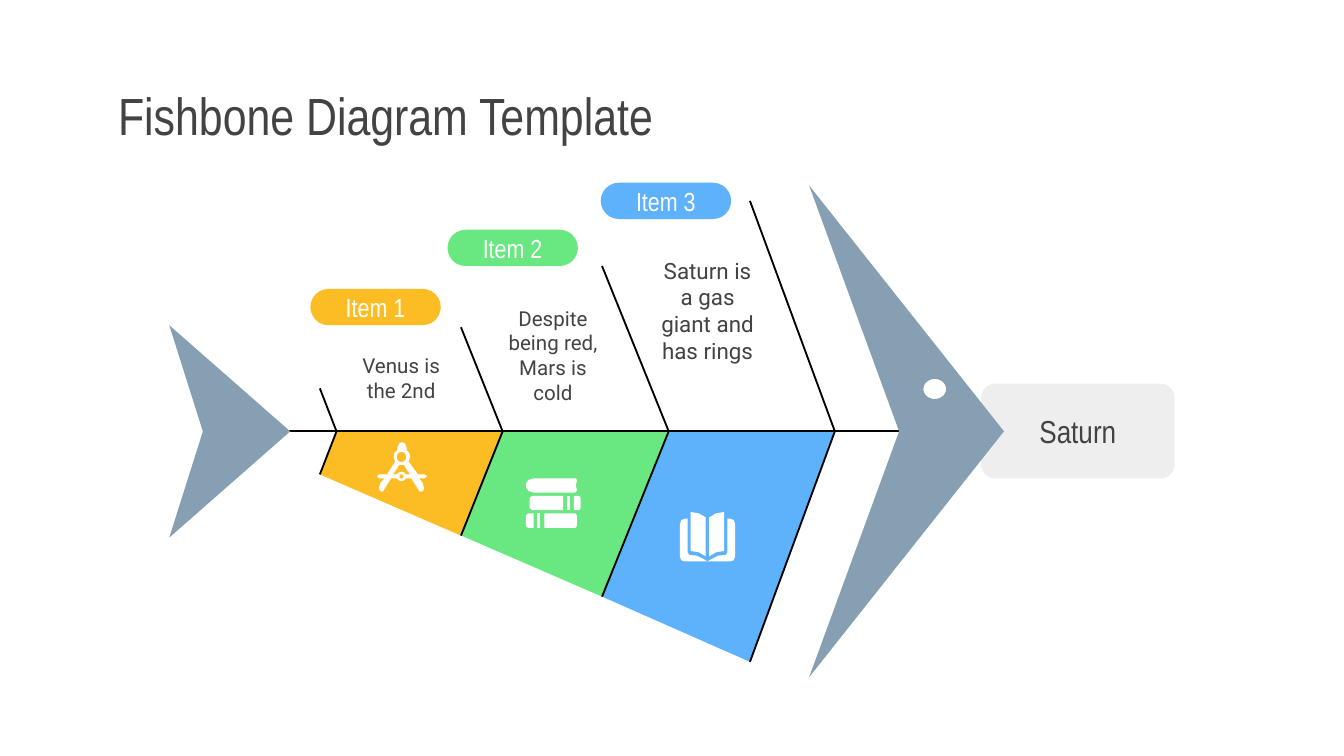
from dataclasses import dataclass
from math import cos, pi, sin

from lxml.etree import SubElement
from pptx import Presentation
from pptx.dml.color import RGBColor as Color
from pptx.enum.shapes import MSO_CONNECTOR as Connector, MSO_SHAPE as Shape
from pptx.enum.text import MSO_ANCHOR as Anchor, PP_ALIGN as Align
from pptx.oxml.ns import qn
from pptx.util import Inches, Pt


@dataclass(frozen=True)
class Theme:
    heading: str = "Arial Narrow"
    body: str = "Roboto"
    text: str = "434343"
    white: str = "FFFFFF"
    black: str = "000000"
    fish: str = "869FB2"
    label: str = "EEEEEE"
    amber: str = "FCBD24"
    green: str = "69E781"
    blue: str = "5EB2FC"
    title_size: int = 28
    label_size: int = 17
    item_size: int = 14
    line_width: float = 0.98


theme = Theme()
deck = Presentation()
deck.slide_width = Inches(10)
deck.slide_height = Inches(10) * 9 // 16
page = deck.slides.add_slide(deck.slide_layouts[6])
shapes = page.shapes
CELL = deck.slide_width // 100  # square grid, 100 columns across the slide


def draw_outline(contours, fill=None):
    """Draw grid points as one shape: filled and closed, or an open black line."""
    grid = [[(x * CELL, y * CELL) for x, y in contour] for contour in contours]
    builder = shapes.build_freeform(*grid[0][0])
    for number, points in enumerate(grid):
        if number:
            builder.move_to(*points[0])
        builder.add_line_segments(points[1:], close=fill is not None)
    outline = builder.convert_to_shape()
    outline.shadow.inherit = False
    if fill:
        outline.fill.solid()
        outline.fill.fore_color.rgb = Color.from_string(fill)
        outline.line.fill.background()
    else:
        outline.fill.background()
        outline.line.color.rgb = Color.from_string(theme.black)
        outline.line.width = Pt(theme.line_width)


def add_text(text, area, font, size, color=theme.text, align=Align.CENTER,
             fill=None, rounding=0.5):
    """Add text in a grid area, on a rounded rectangle when a fill is given."""
    place = [round(length * CELL) for length in area]
    if fill:
        box = shapes.add_shape(Shape.ROUNDED_RECTANGLE, *place)
        box.adjustments[0] = rounding
        box.shadow.inherit = False
        box.fill.solid()
        box.fill.fore_color.rgb = Color.from_string(fill)
        box.line.fill.background()
    else:
        box = shapes.add_textbox(*place)
    frame = box.text_frame
    frame.word_wrap = True
    frame.vertical_anchor = Anchor.MIDDLE
    frame.margin_left = frame.margin_right = CELL
    frame.margin_top = frame.margin_bottom = CELL
    para = frame.paragraphs[0]
    para.text = text
    para.alignment = align
    para.font.name = font
    para.font.size = Pt(size)
    para.font.color.rgb = Color.from_string(color)


# Fish geometry, mirrored about the spine
SPINE = 32.1
bases = [25.04 + 12.36 * rib for rib in range(4)]
tips = [(23.8, 3.2), (34.3, 7.75), (44.8, 12.3), (55.8, 17.15)]  # column, reach

# Circles cut out of other outlines: centre, horizontal and vertical radius
turns = [2 * pi * step / 24 for step in range(24)]
eye, hinge, pivot = [
    [(x + across * cos(turn), y + down * sin(turn)) for turn in turns]
    for x, y, across, down in [
        (69.55, 28.95, 0.85, 0.75), (29.87, 34, 0.35, 0.38), (29.87, 35.45, 0.16, 0.16)]
]

# Icons: one list of shapes each, every shape a list of contours
compass = [[
    [(29.9, 32.9), (30.15, 33), (30.25, 33.3), (30.25, 33.5), (30.45, 33.7),
     (30.52, 34), (30.4, 34.35), (31.1, 35.3), (31.6, 35.3), (31.77, 35.45),
     (31.6, 35.6), (31.2, 35.6), (31.45, 35.95), (31.55, 36.35), (31.45, 36.55),
     (31.3, 36.6), (31.2, 36.55), (30.6, 35.6), (30.2, 35.6), (30.05, 35.75),
     (29.87, 35.8), (29.7, 35.75), (29.5, 35.6), (29.1, 35.6), (28.5, 36.55),
     (28.4, 36.6), (28.25, 36.5), (28.2, 36.3), (28.3, 35.95), (28.6, 35.6),
     (28.2, 35.6), (28.05, 35.45), (28.2, 35.3), (28.8, 35.3), (29.4, 34.35),
     (29.28, 34), (29.35, 33.7), (29.55, 33.5), (29.6, 33.2), (29.7, 33)],
    hinge,
    [(29.7, 34.6), (30.05, 34.6), (30.5, 35.3), (30.2, 35.3), (30.05, 35.15),
     (29.87, 35.1), (29.7, 35.15), (29.5, 35.3), (29.25, 35.3)],
    pivot,
]]
books = [
    [[(39.7, 35.6), (39.35, 35.7), (39.15, 35.95), (39.15, 36.3), (39.35, 36.55),
      (39.7, 36.65), (42.8, 36.65), (42.95, 36.5), (42.83, 36.1), (42.95, 35.75),
      (42.85, 35.6)]],
    [[(42.2, 36.9), (42.2, 37.95), (42.4, 37.95), (42.4, 36.9)]],
    [[(42.7, 36.9), (42.7, 37.95), (43.1, 37.95), (43.2, 37.8), (43.2, 37.05),
      (43.1, 36.9)]],
    [[(39.6, 36.9), (39.4, 37.05), (39.4, 37.8), (39.6, 37.95), (41.9, 37.95),
      (41.9, 36.9)]],
    [[(39.97, 38.2), (39.97, 39.28), (40.2, 39.28), (40.2, 38.2)]],
    [[(40.5, 38.2), (40.5, 39.28), (42.8, 39.28), (42.93, 39.15), (42.93, 38.35),
      (42.8, 38.2)]],
    [[(39.3, 38.2), (39.13, 38.35), (39.13, 39.15), (39.3, 39.28), (39.7, 39.28),
      (39.7, 38.2)]],
]
BOOK_FOLD = 52.64
cover = [(1.48, 38.6), (1.48, 41.1), (1.35, 41.3), (0.8, 41.35), (0.3, 41.6),
         (0, 41.78), (1.7, 41.78), (1.95, 41.7), (2.05, 41.4), (2.05, 39),
         (1.95, 38.7), (1.7, 38.6)]
leaf = [(1.25, 38.1), (0.65, 38.2), (0.13, 38.5), (0.13, 41.4), (0.65, 41.1),
        (1.25, 41)]
open_book = [[[(BOOK_FOLD + side * x, y) for x, y in part]]
             for part in (cover, leaf) for side in (-1, 1)]

add_text("Saturn", (73, 28.55, 14.4, 7.05), theme.heading, theme.label_size,
         fill=theme.label, rounding=0.15)
add_text("Fishbone Diagram Template", (7.8, 5.9, 84.5, 5.3), theme.heading,
         theme.title_size, align=Align.LEFT)

# Items: colour, label corner, note corner, note, note size, icon
items = [
    (theme.amber, (23.1, 21.5), (25, 25.2), "Venus is the 2nd", 11, compass),
    (theme.green, (33.3, 17.1), (36.3, 23.5), "Despite being red, Mars is cold", 11,
     books),
    (theme.blue, (44.7, 13.6), (47.8, 20.2), "Saturn is a gas giant and has rings", 12,
     open_book),
]
for index, (color, label_corner, note_corner, note, size, icon) in enumerate(items):
    left, right = bases[index:index + 2]
    (left_tip, left_reach), (right_tip, right_reach) = tips[index:index + 2]
    draw_outline([[(left, SPINE), (left_tip, SPINE + left_reach),
                   (right_tip, SPINE + right_reach), (right, SPINE)]], color)
    add_text(f"Item {index + 1}", (*label_corner, 9.7, 2.7), theme.heading,
             theme.item_size, theme.white, fill=color)
    add_text(note, (*note_corner, 9.7, 5.8), theme.body, size)
    for contours in icon:
        draw_outline(contours, theme.white)

# Bones: three bent ribs, then the spine and the two halves of the last rib
for base, (tip, reach) in zip(bases[:3], tips):
    draw_outline([[(tip, SPINE - reach), (base, SPINE), (tip, SPINE + reach)]])
last_tip, last_reach = tips[3]
for start_x, end_x, end_y in [(21.4, 66.9, SPINE),
                              (bases[3], last_tip, SPINE + last_reach),
                              (bases[3], last_tip, SPINE - last_reach)]:
    ends = [round(length * CELL) for length in (start_x, SPINE, end_x, end_y)]
    bone = shapes.add_connector(Connector.STRAIGHT, *ends)
    bone.line.color.rgb = Color.from_string(theme.black)
    bone.line.width = Pt(theme.line_width)
    SubElement(bone._element.spPr, qn("a:effectLst"))

# Tail, and head with the eye cut out
draw_outline([[(12.6, SPINE - 7.9), (15.1, SPINE), (12.6, SPINE + 7.9),
               (21.6, SPINE)]], theme.fish)
draw_outline([[(60.2, SPINE - 18.3), (66.9, SPINE), (60.2, SPINE + 18.3),
               (74.7, SPINE)], eye], theme.fish)

deck.save("out.pptx")
